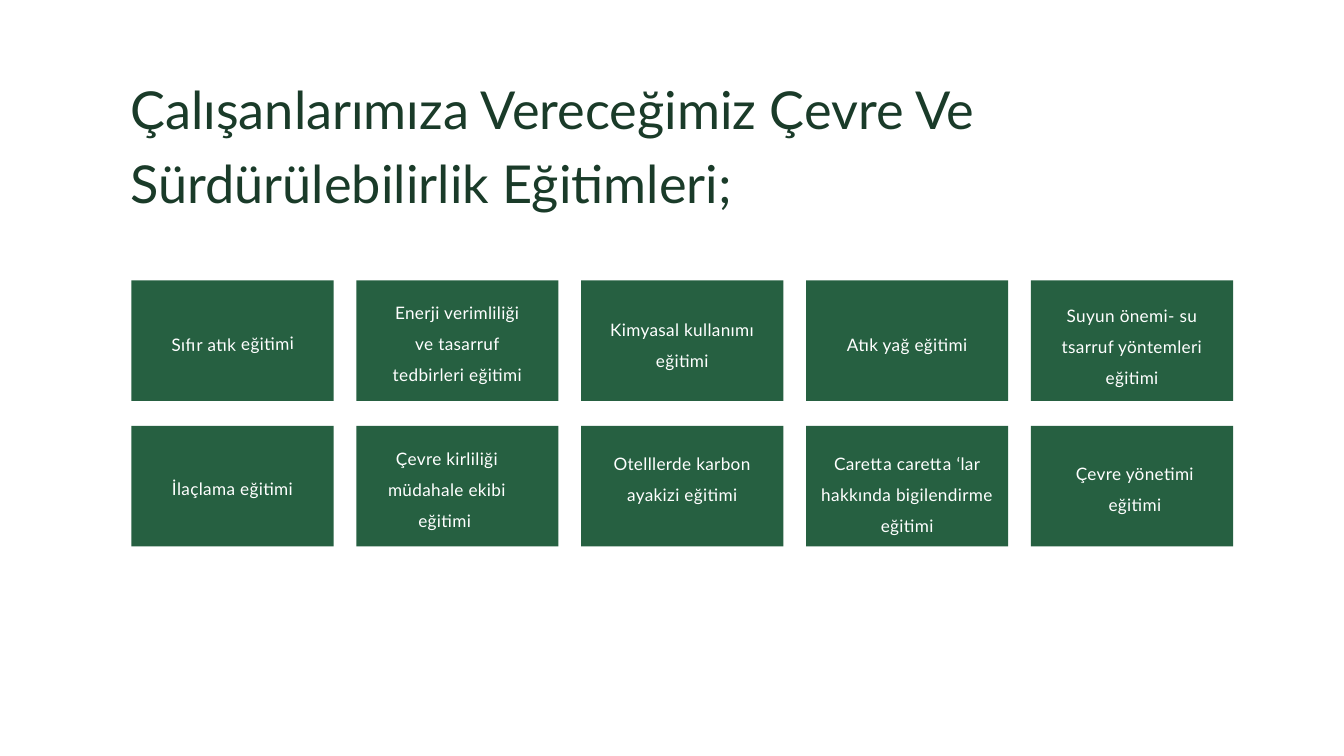
"""Build the slide listing the staff training courses on environment and sustainability."""
from pptx import Presentation
from pptx import util as u
from pptx.dml.color import RGBColor
from pptx.enum import shapes, text

HEAD = "Çalışanlarımıza Vereceğimiz Çevre Ve Sürdürülebilirlik Eğitimleri;"
# text, lines, width, shift from card centre, drop from card top, turn
ROWS = [
    [
        ("Sıfır atık eğitimi", 1, 5.54, 0, 1.63, 359),
        ("Enerji verimliliği ve tasarruf tedbirleri eğitimi", 3, 5.54, 0, 0.46, 0),
        ("Kimyasal kullanımı eğitimi", 2, 5.54, 0, 1.09, 0),
        ("Atık yağ eğitimi", 1, 5.54, 0, 1.65, 0),
        ("Suyun önemi- su tsarruf yöntemleri eğitimi", 3, 6.63, 0, 0.56, 0),
    ],
    [
        ("İlaçlama eğitimi", 1, 6.07, 0, 1.6, 0),
        ("Çevre kirliliği müdahale ekibi eğitimi ", 3, 5.54, -0.39, 0.46, 0),
        ("Otelllerde karbon ayakizi eğitimi", 3, 5.54, 0, 0.64, 0),
        ("Caretta caretta ‘lar hakkında bigilendirme eğitimi", 3, 7.11, 0, 0.64, 0),
        ("Çevre yönetimi eğitimi", 2, 5.54, 0.11, 1.02, 0),
    ],
]
THEME = {
    "font": "Lato",
    "ink": RGBColor(0x1A, 0x3B, 0x29),
    "card": RGBColor(0x26, 0x60, 0x41),
    "pale": RGBColor(0xFF, 0xFF, 0xFF),
    "head": (56, 78.4),
    "body": (18.4, 33.1),
}
LEFT, TOP = 4.97, 10.6
WIDE, HIGH = 7.64, 4.56
STEP, DROP = 8.5, 5.5


def place(x, y, w, h):
    return u.Cm(x), u.Cm(y), u.Cm(w), u.Cm(h)


def write(shape, words, kind, ink, align):
    frame = shape.text_frame
    frame.word_wrap = True
    frame.auto_size = text.MSO_AUTO_SIZE.NONE
    frame.vertical_anchor = text.MSO_ANCHOR.TOP
    frame.margin_left = frame.margin_right = 0
    frame.margin_top = frame.margin_bottom = 0
    size, lead = THEME[kind]
    para = frame.paragraphs[0]
    para.alignment = align
    para.line_spacing = u.Pt(lead)
    run = para.add_run()
    run.text = words
    run.font.name = THEME["font"]
    run.font.size = u.Pt(size)
    run.font.color.rgb = THEME[ink]
    return run


def add_card(slide, x, y, words, lines, wide, shift, drop, turn):
    card = slide.shapes.add_shape(shapes.MSO_SHAPE.RECTANGLE, *place(x, y, WIDE, HIGH))
    card.shadow.inherit = False
    card.fill.solid()
    card.fill.fore_color.rgb = THEME["card"]
    card.line.fill.background()
    left = x + (WIDE - wide) / 2 + shift
    high = 1.04 + 1.16 * (lines - 1)
    label = slide.shapes.add_textbox(*place(left, y + drop, wide, high))
    label.rotation = turn
    run = write(label, words, "body", "pale", text.PP_ALIGN.CENTER)
    run.font._element.set("spc", "40")


def main():
    deck = Presentation()
    deck.slide_width, deck.slide_height = u.Cm(50.8), u.Cm(28.58)
    slide = deck.slides.add_slide(deck.slide_layouts[5])
    title = slide.shapes.title
    title.left, title.top, title.width, title.height = place(4.93, 2.54, 40.74, 5.44)
    write(title, HEAD, "head", "ink", text.PP_ALIGN.LEFT)
    for row, cards in enumerate(ROWS):
        for col, card in enumerate(cards):
            add_card(slide, LEFT + col * STEP, TOP + row * DROP, *card)
    deck.save("out.pptx")


if __name__ == "__main__":
    main()
